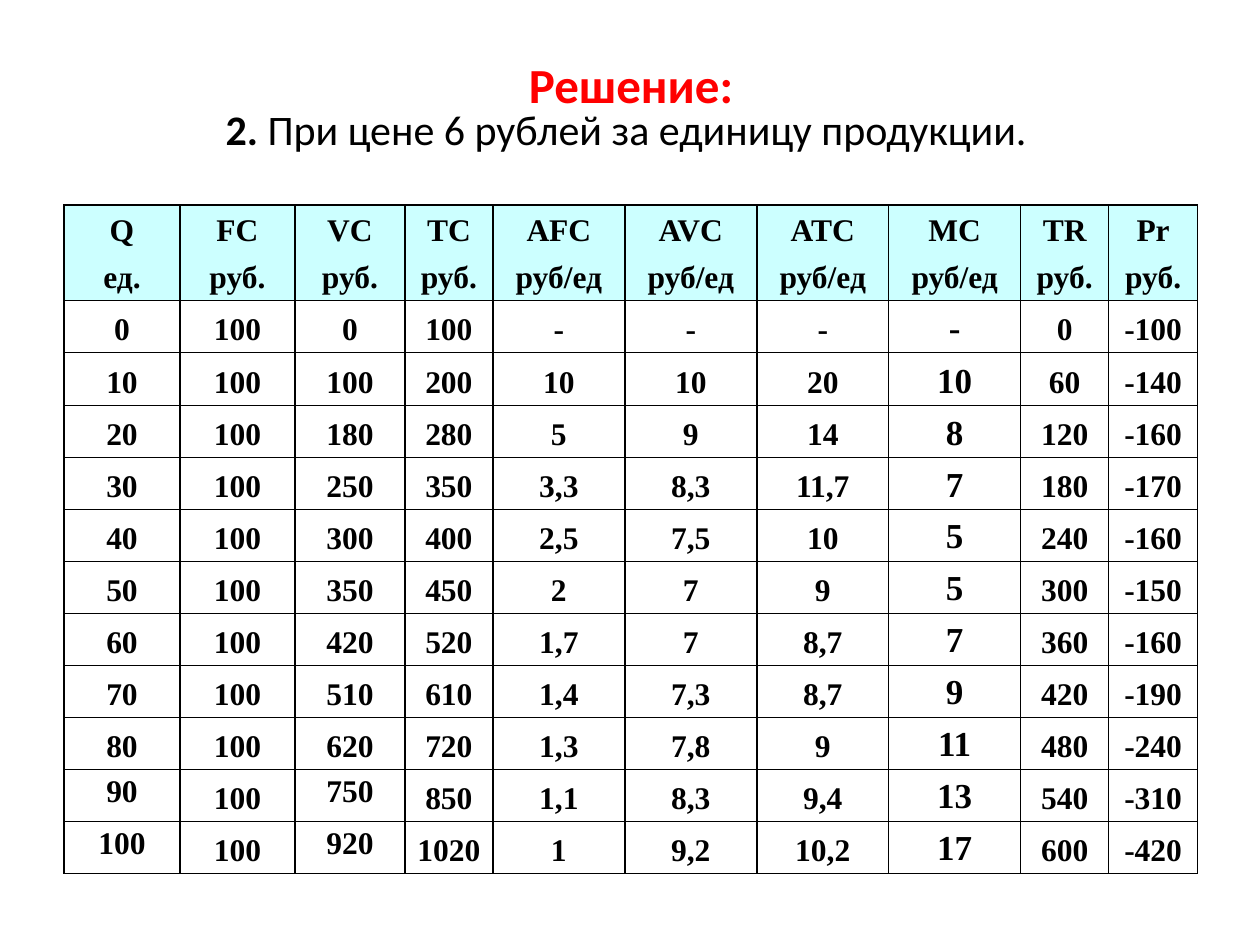
from dataclasses import dataclass

from lxml import etree
from pptx import Presentation
from pptx.dml.color import RGBColor
from pptx.enum.text import MSO_ANCHOR, PP_ALIGN
from pptx.oxml.ns import qn
from pptx.slide import Slide
from pptx.util import Pt

CENTER = PP_ALIGN.CENTER
TOP, MIDDLE, BOTTOM = MSO_ANCHOR.TOP, MSO_ANCHOR.MIDDLE, MSO_ANCHOR.BOTTOM
SCALE = 914400 / 126
COLORS = {"title": "FF0000", "ink": "000000", "header": "CCFFFF"}
HEADER_ROWS = 2
MARGINAL_COLUMN = 7
TOP_CELLS = {(11, 0), (11, 2), (12, 0), (12, 2)}
COLUMN_WIDTHS = [116, 115, 110, 88, 132, 132, 132, 132, 88, 89]
ROW_HEIGHTS = [47, 47, 52, 53] + [52, 51] * 4 + [52]
COSTS = [
    ["Q", "FC", "VC", "TC", "AFC", "AVC", "ATC", "MC", "TR", "Pr"],
    ["ед."] + ["руб."] * 3 + ["руб/ед"] * 4 + ["руб."] * 2,
    ["0", "100", "0", "100", "-", "-", "-", "-", "0", "-100"],
    ["10", "100", "100", "200", "10", "10", "20", "10", "60", "-140"],
    ["20", "100", "180", "280", "5", "9", "14", "8", "120", "-160"],
    ["30", "100", "250", "350", "3,3", "8,3", "11,7", "7", "180", "-170"],
    ["40", "100", "300", "400", "2,5", "7,5", "10", "5", "240", "-160"],
    ["50", "100", "350", "450", "2", "7", "9", "5", "300", "-150"],
    ["60", "100", "420", "520", "1,7", "7", "8,7", "7", "360", "-160"],
    ["70", "100", "510", "610", "1,4", "7,3", "8,7", "9", "420", "-190"],
    ["80", "100", "620", "720", "1,3", "7,8", "9", "11", "480", "-240"],
    ["90", "100", "750", "850", "1,1", "8,3", "9,4", "13", "540", "-310"],
    ["100", "100", "920", "1020", "1", "9,2", "10,2", "17", "600", "-420"],
]


def px(length):
    return round(length * SCALE)


def color(name):
    return RGBColor.from_string(COLORS[name])


@dataclass
class Painter:
    """Draws the headings and tables of one slide in a shared style."""

    page: Slide
    heading_font: str = "Calibri"
    table_font: str = "Times New Roman"
    cell_margin: int = 5

    def style(self, font, name, size, ink, bold):
        font.name, font.size, font.bold = name, Pt(size), bold
        font.color.rgb = color(ink)

    def heading(self, left, top, width, height, lines):
        box = self.page.shapes.add_textbox(px(left), px(top), px(width), px(height))
        frame = box.text_frame
        frame.word_wrap = True
        frame.vertical_anchor = MIDDLE
        para = frame.paragraphs[0]
        para.alignment, para.line_spacing = CENTER, 0.8
        for number, spans in enumerate(lines):
            if number:
                para.add_line_break()
            for text, size, ink, bold in spans:
                span = para.add_run()
                span.text = text
                self.style(span.font, self.heading_font, size, ink, bold)

    def borders(self, cell, hidden):
        properties = cell._tc.get_or_add_tcPr()
        for place, side in enumerate(("lnL", "lnR", "lnT", "lnB")):
            line = etree.Element(qn(f"a:{side}"), w=str(Pt(1)))
            if side == hidden:
                etree.SubElement(line, qn("a:noFill"))
            else:
                fill = etree.SubElement(line, qn("a:solidFill"))
                etree.SubElement(fill, qn("a:srgbClr"), val=COLORS["ink"])
            properties.insert(place, line)

    def cell(self, cell, text, size, anchor, fill=None, hidden=None):
        cell.text = text
        cell.vertical_anchor = anchor
        margin = px(self.cell_margin)
        cell.margin_left = cell.margin_right = margin
        cell.margin_top = cell.margin_bottom = margin
        if fill:
            cell.fill.solid()
            cell.fill.fore_color.rgb = color(fill)
        else:
            cell.fill.background()
        para = cell.text_frame.paragraphs[0]
        para.alignment = CENTER
        self.style(para.font, self.table_font, size, "ink", True)
        self.borders(cell, hidden)

    def table(self, left, top, widths, heights, rows):
        frame = self.page.shapes.add_table(
            len(heights), len(widths), px(left), px(top), px(sum(widths)), px(sum(heights)))
        table = frame.table
        table.first_row = table.horz_banding = False
        for column, width in zip(table.columns, widths):
            column.width = px(width)
        for row, height in zip(table.rows, heights):
            row.height = px(height)
        for r, texts in enumerate(rows):
            header = r < HEADER_ROWS
            for c, text in enumerate(texts):
                size = 20 if c == MARGINAL_COLUMN and not header else 18
                anchor = TOP if (r, c) in TOP_CELLS else BOTTOM
                fill = "header" if header else None
                hidden = ("lnB", "lnT")[r] if header else None
                self.cell(table.cell(r, c), text, size, anchor, fill, hidden)


def main():
    deck = Presentation()
    deck.slide_width, deck.slide_height = px(1260), px(945)
    painter = Painter(deck.slides.add_slide(deck.slide_layouts[6]))
    painter.heading(64, 35, 1134, 149, [
        [("Решение:", 28, "title", True)],
        [("2. ", 24, "ink", True),
         ("При цене 6 рублей за единицу продукции. ", 24, "ink", False)],
    ])
    painter.table(64, 205, COLUMN_WIDTHS, ROW_HEIGHTS, COSTS)
    deck.save("out.pptx")


if __name__ == "__main__":
    main()
